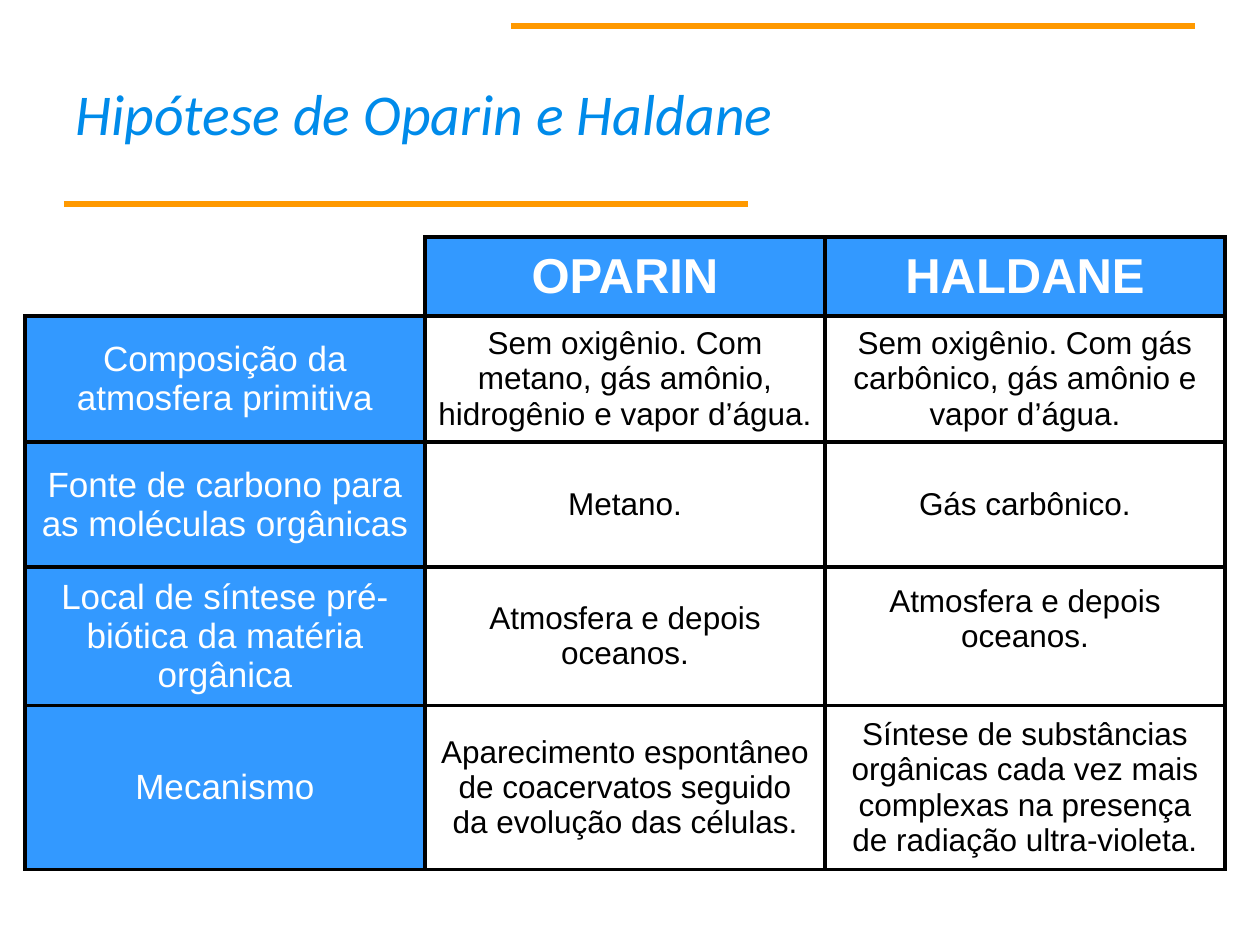
from dataclasses import dataclass

from lxml import etree
from pptx import Presentation
from pptx import util as u
from pptx.dml.color import RGBColor
from pptx.enum import shapes, text
from pptx.oxml import ns

PX = 914400 / 126
COLORS = {
    "rule": "FF9900",
    "title": "008BEA",
    "heading": "3399FF",
    "light": "FFFFFF",
    "dark": "000000",
}


@dataclass(frozen=True)
class Rule:
    left: int
    top: int
    width: int = 684


@dataclass(frozen=True)
class CellStyle:
    size: int
    color: str
    fill: str | None = None
    bold: bool = False


COLUMN_HEAD = CellStyle(28, "light", "heading", True)
ROW_HEAD = CellStyle(20, "light", "heading")
BODY = CellStyle(18, "dark")

RULES = [Rule(64, 204), Rule(511, 26)]
TABLE_LEFT, TABLE_TOP = 25, 237
COLUMN_WIDTH = 400
ROW_HEIGHTS = [79, 125, 125, 125, 125]
RAISED_CELL, RAISED_MARGIN = (3, 2), 41
ROWS = [
    ["", "OPARIN", "HALDANE"],
    [
        "Composição da atmosfera primitiva",
        "Sem oxigênio. Com metano, gás amônio, hidrogênio e vapor d’água.",
        "Sem oxigênio. Com gás carbônico, gás amônio e vapor d’água.",
    ],
    ["Fonte de carbono para as moléculas orgânicas", "Metano.", "Gás carbônico."],
    [
        "Local de síntese pré-biótica da matéria orgânica",
        "Atmosfera e depois oceanos.",
        "Atmosfera e depois oceanos.",
    ],
    [
        "Mecanismo",
        "Aparecimento espontâneo de coacervatos seguido da evolução das células.",
        "Síntese de substâncias orgânicas cada vez mais complexas na presença "
        "de radiação ultra-violeta.",
    ],
]


def px(length: int) -> u.Emu:
    return u.Emu(round(length * PX))


def rgb(name: str) -> RGBColor:
    return RGBColor.from_string(COLORS[name])


def draw_rule(slide, rule: Rule) -> None:
    connector = slide.shapes.add_connector(
        shapes.MSO_CONNECTOR.STRAIGHT,
        px(rule.left), px(rule.top), px(rule.left + rule.width), px(rule.top),
    )
    connector.line.color.rgb = rgb("rule")
    connector.line.width = u.Pt(3)
    etree.SubElement(connector._element.spPr, ns.qn("a:effectLst"))


def draw_title(slide, wording: str) -> None:
    shape = slide.shapes.add_textbox(px(63), px(38), px(1134), px(158))
    frame = shape.text_frame
    frame.text = wording
    frame.word_wrap = True
    frame.vertical_anchor = text.MSO_ANCHOR.MIDDLE
    paragraph = frame.paragraphs[0]
    paragraph.line_spacing = 0.9
    font = paragraph.runs[0].font
    font.name, font.size, font.italic = "Calibri", u.Pt(33), True
    font.color.rgb = rgb("title")


def draw_borders(cell, sides: str) -> None:
    """Rule the given sides (letters of LRTB) and clear the others."""
    properties = cell._tc.get_or_add_tcPr()
    for side in "LRTB":
        line = etree.SubElement(properties, ns.qn(f"a:ln{side}"), w=str(u.Pt(2.25)))
        if side in sides:
            fill = etree.SubElement(line, ns.qn("a:solidFill"))
            etree.SubElement(fill, ns.qn("a:srgbClr"), val=COLORS["dark"])
        else:
            etree.SubElement(line, ns.qn("a:noFill"))


def fill_cell(cell, wording: str, style: CellStyle) -> None:
    if style.fill:
        cell.fill.solid()
        cell.fill.fore_color.rgb = rgb(style.fill)
    else:
        cell.fill.background()
    cell.vertical_anchor = text.MSO_ANCHOR.MIDDLE
    cell.text_frame.text = wording
    paragraph = cell.text_frame.paragraphs[0]
    paragraph.alignment = text.PP_ALIGN.CENTER
    for run in paragraph.runs:
        run.font.name, run.font.size = "Arial", u.Pt(style.size)
        run.font.bold = style.bold
        run.font.color.rgb = rgb(style.color)


def cell_style(row: int, column: int) -> CellStyle:
    if row == 0:
        return COLUMN_HEAD if column else BODY
    return BODY if column else ROW_HEAD


def draw_table(slide) -> None:
    columns = len(ROWS[0])
    table = slide.shapes.add_table(
        len(ROWS), columns, px(TABLE_LEFT), px(TABLE_TOP),
        px(COLUMN_WIDTH * columns), px(sum(ROW_HEIGHTS)),
    ).table
    table.first_row = table.horz_banding = False
    for column in table.columns:
        column.width = px(COLUMN_WIDTH)
    for row, height in zip(table.rows, ROW_HEIGHTS):
        row.height = px(height)
    for row, wordings in enumerate(ROWS):
        for column, wording in enumerate(wordings):
            cell = table.cell(row, column)
            draw_borders(cell, "LRTB" if row or column else "RB")
            fill_cell(cell, wording, cell_style(row, column))
    table.cell(*RAISED_CELL).margin_bottom = px(RAISED_MARGIN)


def main() -> None:
    presentation = Presentation()
    presentation.slide_width, presentation.slide_height = px(1260), px(945)
    slide = presentation.slides.add_slide(presentation.slide_layouts[6])
    for rule in RULES:
        draw_rule(slide, rule)
    draw_title(slide, "Hipótese de Oparin e Haldane")
    draw_table(slide)
    presentation.save("out.pptx")


if __name__ == "__main__":
    main()
